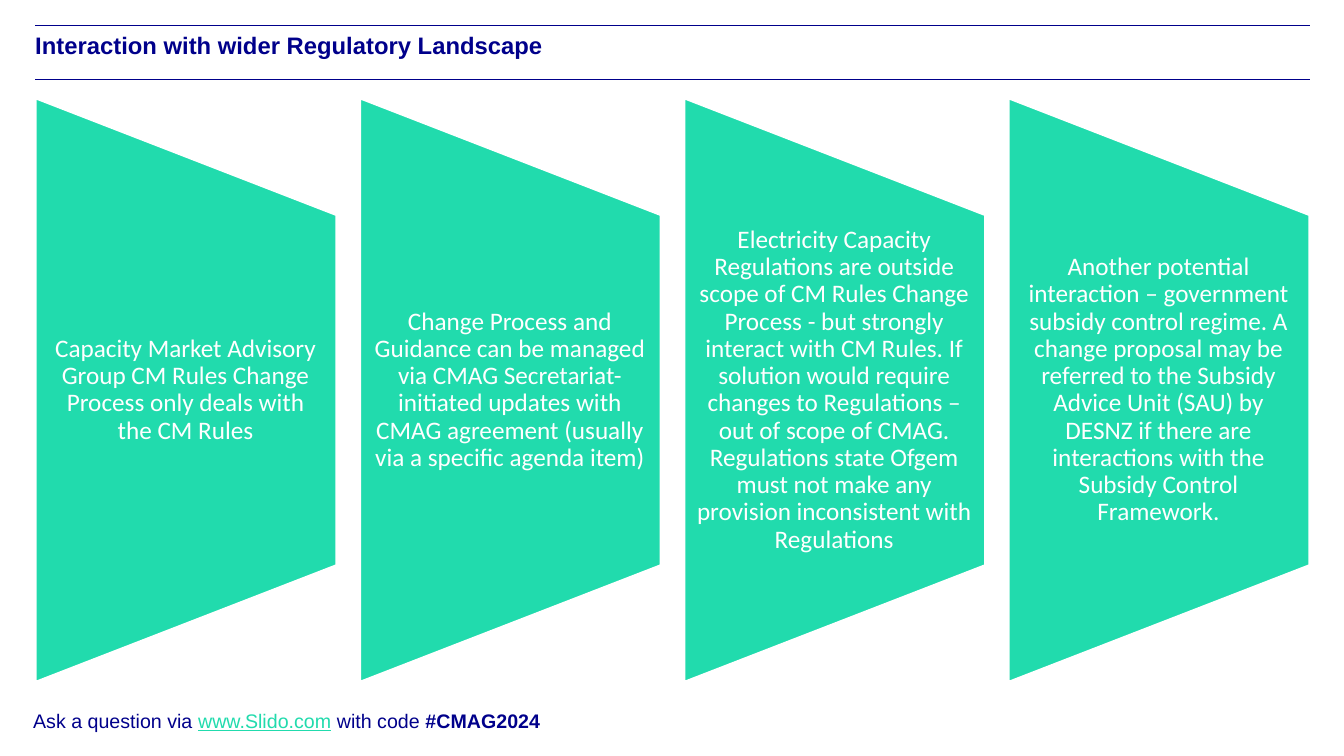
from lxml import etree
from pptx import Presentation
from pptx.dml.color import RGBColor
from pptx.enum.shapes import MSO_CONNECTOR, MSO_SHAPE
from pptx.enum.text import MSO_ANCHOR, PP_ALIGN
from pptx.oxml.ns import qn
from pptx.util import Inches, Pt

STRAIGHT = MSO_CONNECTOR.STRAIGHT
TRAPEZOID = MSO_SHAPE.FLOWCHART_MANUAL_OPERATION
TOP, MIDDLE = MSO_ANCHOR.TOP, MSO_ANCHOR.MIDDLE
LEFT, CENTER = PP_ALIGN.LEFT, PP_ALIGN.CENTER

NAVY, GREEN, WHITE = "00008B", "21DBAD", "FFFFFF"

HEADING = "Interaction with wider Regulatory Landscape"
INTERACTIONS = [
    "Capacity Market Advisory Group CM Rules Change Process only deals with the CM Rules",
    "Change Process and Guidance can be managed via CMAG Secretariat-initiated updates "
    "with CMAG agreement (usually via a specific agenda item)",
    "Electricity Capacity Regulations are outside scope of CM Rules Change Process - but "
    "strongly interact with CM Rules. If solution would require changes to Regulations – "
    "out of scope of CMAG. Regulations state Ofgem must not make any provision "
    "inconsistent with Regulations",
    "Another potential interaction – government subsidy control regime. A change proposal "
    "may be referred to the Subsidy Advice Unit (SAU) by DESNZ if there are interactions "
    "with the Subsidy Control Framework.",
]
QUESTION = [
    ("Ask a question via ", NAVY, False, False),
    ("www.Slido.com", GREEN, False, True),
    (" with code ", NAVY, False, False),
    ("#CMAG2024", NAVY, True, False),
]

MARGIN, CONTENT_WIDTH = 0.35, 12.64
RULE_TOPS = (0.25, 0.79)
PANEL_TOP, PANEL_WIDTH, PANEL_HEIGHT = 0.97, 2.99, 5.8
PANEL_STEP = (CONTENT_WIDTH - PANEL_WIDTH) / (len(INTERACTIONS) - 1)
PANEL_MIDDLE = PANEL_TOP + PANEL_HEIGHT / 2
WORDING_HEIGHT = 3.48


def color(hex_code):
    return RGBColor.from_string(hex_code)


def add_rule(slide, top):
    rule = slide.shapes.add_connector(
        STRAIGHT, Inches(MARGIN), Inches(top), Inches(MARGIN + CONTENT_WIDTH), Inches(top))
    rule.line.color.rgb = color(NAVY)
    rule.line.width = Pt(0.5)
    etree.SubElement(rule._element.spPr, qn("a:effectLst"))


def add_text(slide, box, runs, font_name, size, insets, anchor=TOP, align=LEFT):
    frame = slide.shapes.add_textbox(*map(Inches, box)).text_frame
    frame.word_wrap = True
    frame.vertical_anchor = anchor
    (frame.margin_left, frame.margin_top,
     frame.margin_right, frame.margin_bottom) = map(Inches, insets)
    paragraph = frame.paragraphs[0]
    paragraph.alignment = align
    for wording, ink, bold, underline in runs:
        run = paragraph.add_run()
        run.text = wording
        run.font.name = font_name
        run.font.size = Pt(size)
        run.font.color.rgb = color(ink)
        run.font.bold = bold
        run.font.underline = underline
    return paragraph


def add_panel(slide, left, wording):
    panel = slide.shapes.add_shape(
        TRAPEZOID,
        Inches(left + (PANEL_WIDTH - PANEL_HEIGHT) / 2),
        Inches(PANEL_MIDDLE - PANEL_WIDTH / 2),
        Inches(PANEL_HEIGHT), Inches(PANEL_WIDTH))
    panel.rotation = 270
    panel.shadow.inherit = False
    panel.fill.solid()
    panel.fill.fore_color.rgb = color(GREEN)
    panel.line.color.rgb = color(WHITE)
    panel.line.width = Pt(2)
    paragraph = add_text(
        slide, (left, PANEL_MIDDLE - WORDING_HEIGHT / 2, PANEL_WIDTH, WORDING_HEIGHT),
        [(wording, WHITE, False, False)], "Calibri", 18, (0.12, 0, 0.13, 0), MIDDLE, CENTER)
    paragraph.line_spacing = 0.9


def main():
    deck = Presentation()
    deck.slide_width, deck.slide_height = Inches(13.33), Inches(7.5)
    slide = deck.slides.add_slide(deck.slide_layouts[6])
    for top in RULE_TOPS:
        add_rule(slide, top)
    add_text(slide, (MARGIN, 0.3, CONTENT_WIDTH, 0.49),
             [(HEADING, NAVY, True, False)], "Arial", 17, (0, 0, 0, 0))
    for index, wording in enumerate(INTERACTIONS):
        add_panel(slide, MARGIN + index * PANEL_STEP, wording)
    add_text(slide, (0.23, 6.98, 5.61, 0.34), QUESTION, "Arial", 14, (0.1, 0.05, 0.1, 0.05))
    deck.save("out.pptx")


if __name__ == "__main__":
    main()
